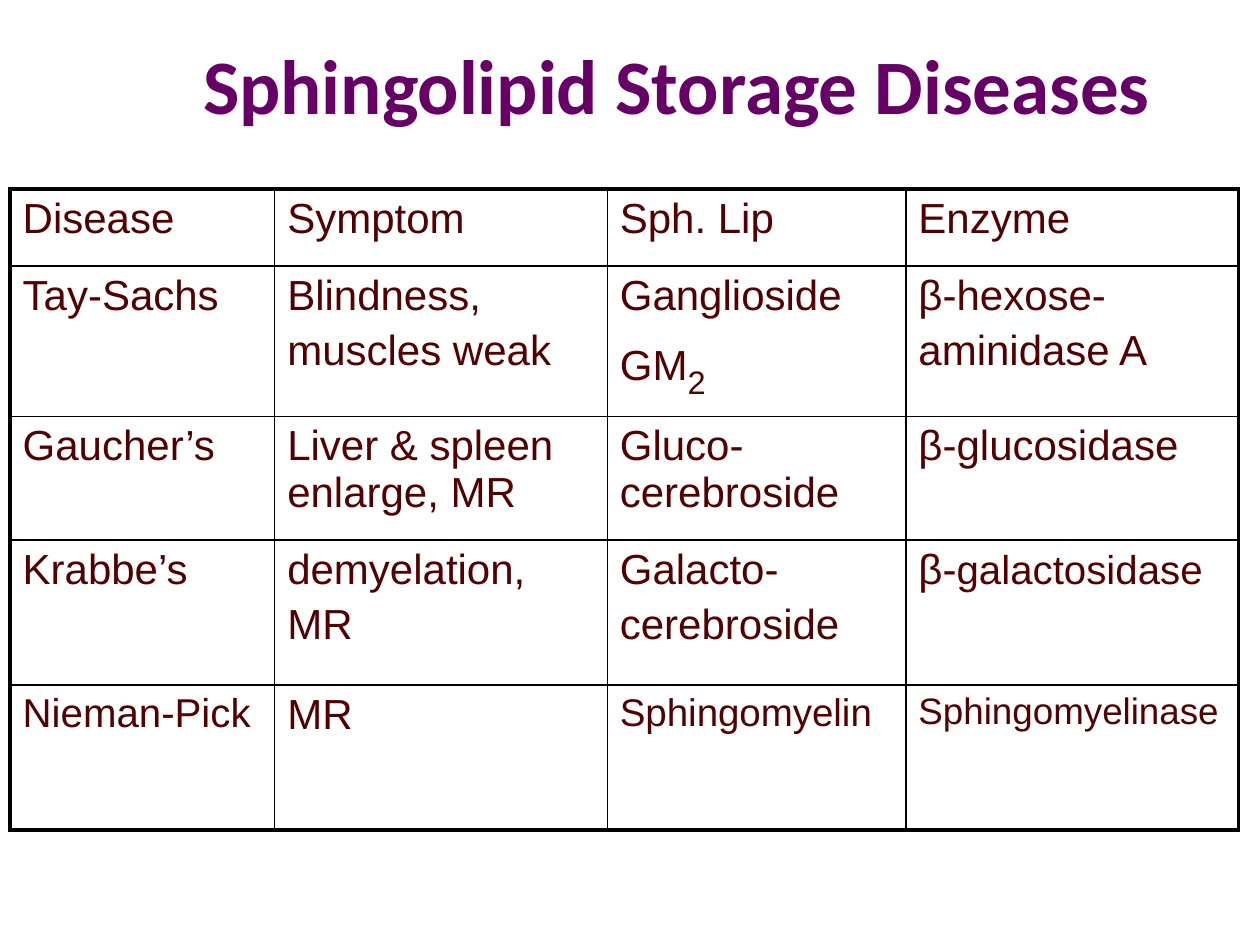
import pptx
import pptx.util
import pptx.dml.color
import pptx.enum.text
import pptx.oxml
import pptx.oxml.ns

Inches, Pt = pptx.util.Inches, pptx.util.Pt
COLORS = {"title": "660066", "text": "540000", "line": "000000"}
TITLE = "Sphingolipid Storage Diseases"
BODY_SIZE = 24
THIN, THICK = 1, 2.25

# A cell is a list of paragraphs; a paragraph is a list of (text, format) spans.
def plain(*lines, size=BODY_SIZE):
    return [[(line, {"size": size})] for line in lines]


ROWS = [
    [plain("Disease"), plain("Symptom"), plain("Sph. Lip"), plain("Enzyme")],
    [plain("Tay-Sachs"), plain("Blindness,", "muscles weak"),
     [[("Ganglioside", {})], [("GM", {}), ("2", {"size": 32, "baseline": -25})]],
     plain("β-hexose-", "aminidase A")],
    [plain("Gaucher’s"), plain("Liver & spleen enlarge, MR"),
     plain("Gluco-cerebroside"), plain("β-glucosidase")],
    [plain("Krabbe’s"), plain("demyelation,", "MR"), plain("Galacto-", "cerebroside"),
     [[("β-", {}), ("galactosidase", {"size": 23})]]],
    [plain("Nieman-Pick", size=23), plain("MR"),
     plain("Sphingomyelin", size=22), plain("Sphingomyelinase", size=21)],
]
COLUMN_WIDTHS = [2.1, 2.64, 2.37, 2.64]
ROW_HEIGHTS = [0.61, 1.11, 0.98, 1.15, 1.15]


def add_span(para, text, size=BODY_SIZE, font="Arial", color="text", bold=False, baseline=0):
    span = para.add_run()
    span.text = text
    span.font.size = Pt(size)
    span.font.name = font
    span.font.bold = bold
    span.font.color.rgb = pptx.dml.color.RGBColor.from_string(COLORS[color])
    if baseline:
        span.font._element.set("baseline", str(baseline * 1000))


def set_space_before(para, percent):
    spacing = pptx.oxml.parse_xml(
        f'<a:spcBef {pptx.oxml.ns.nsdecls("a")}><a:spcPct val="{percent * 1000}"/></a:spcBef>')
    para._p.get_or_add_pPr().insert(0, spacing)


def set_borders(cell, **widths):
    properties = cell._tc.get_or_add_tcPr()
    for index, (side, width) in enumerate(widths.items()):
        properties.insert(index, pptx.oxml.parse_xml(
            f'<a:ln{side} {pptx.oxml.ns.nsdecls("a")} w="{Pt(width)}"><a:solidFill>'
            f'<a:srgbClr val="{COLORS["line"]}"/></a:solidFill></a:ln{side}>'))


def fill_cell(cell, paragraphs):
    cell.fill.background()
    frame = cell.text_frame
    for index, spans in enumerate(paragraphs):
        para = frame.add_paragraph() if index else frame.paragraphs[0]
        set_space_before(para, 20)
        for text, style in spans:
            add_span(para, text, **style)


deck = pptx.Presentation()
deck.slide_width, deck.slide_height = Inches(10), Inches(7.5)
page = deck.slides.add_slide(deck.slide_layouts[6])

# Title
box = page.shapes.add_textbox(Inches(1.25), Inches(0), Inches(8.25), Inches(1.33))
box.text_frame.word_wrap = True
box.text_frame.vertical_anchor = pptx.enum.text.MSO_ANCHOR.MIDDLE
heading = box.text_frame.paragraphs[0]
heading.alignment = pptx.enum.text.PP_ALIGN.CENTER
add_span(heading, TITLE, size=44, font="Calibri", color="title", bold=True)

# Disease table: thick outer frame, thin inner lines
table = page.shapes.add_table(
    len(ROWS), len(COLUMN_WIDTHS), Inches(0.08), Inches(1.5),
    Inches(sum(COLUMN_WIDTHS)), Inches(sum(ROW_HEIGHTS))).table
table.first_row = table.horz_banding = False
for column, width in zip(table.columns, COLUMN_WIDTHS):
    column.width = Inches(width)
for row, height in zip(table.rows, ROW_HEIGHTS):
    row.height = Inches(height)

last_row, last_column = len(ROWS) - 1, len(COLUMN_WIDTHS) - 1
for r, row in enumerate(ROWS):
    for c, paragraphs in enumerate(row):
        cell = table.cell(r, c)
        fill_cell(cell, paragraphs)
        set_borders(cell,
                    L=THICK if c == 0 else THIN,
                    R=THICK if c == last_column else THIN,
                    T=THICK if r == 0 else THIN,
                    B=THICK if r == last_row else THIN)

deck.save("out.pptx")
